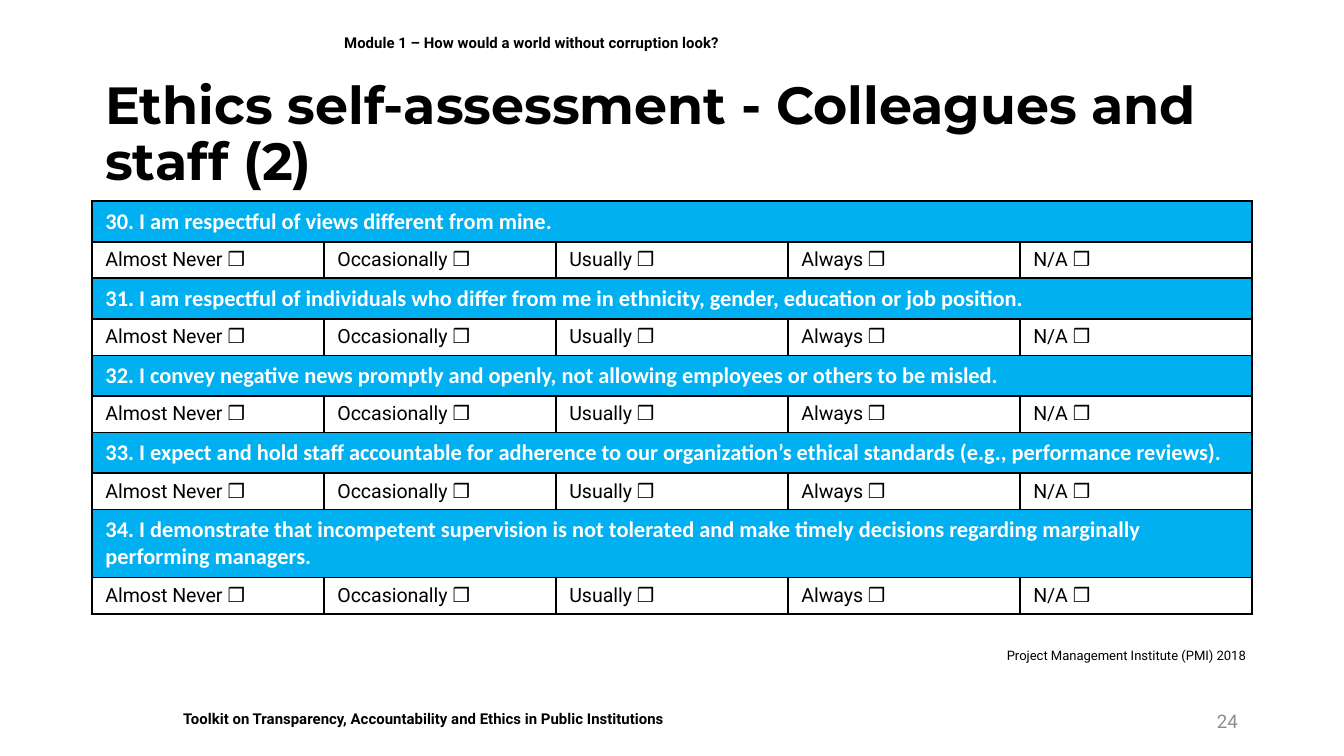
"""Build the ethics self-assessment slide: five statements, each with an answer row."""
from lxml.etree import SubElement
from pptx import Presentation
from pptx.dml.color import RGBColor
from pptx.enum.shapes import MSO_SHAPE
from pptx.enum.text import MSO_ANCHOR, PP_ALIGN
from pptx.oxml.ns import qn
from pptx.util import Emu, Pt

SCALE = 914400 / 134.4
STATEMENTS = [
    "30. I am respectful of views different from mine.",
    "31. I am respectful of individuals who differ from me in ethnicity, gender, education or job position.",
    "32. I convey negative news promptly and openly, not allowing employees or others to be misled.",
    "33. I expect and hold staff accountable for adherence to our organization’s ethical standards (e.g., performance reviews).",
    "34. I demonstrate that incompetent supervision is not tolerated and make timely decisions regarding marginally performing managers.",
]
ANSWERS = ["Almost Never ❒", "Occasionally ❒", "Usually ❒", "Always ❒", "N/A ❒"]
HEADER = dict(name="Calibri", size=Pt(12), bold=True)
ANSWER = dict(name="Roboto", size=Pt(10.5), bold=False)
LABEL = dict(name="Roboto", size=Pt(8), bold=True)
NUMBER = dict(name="Roboto", size=Pt(10), bold=False)
SOURCE = dict(name="Roboto", size=Pt(7), bold=False)
TITLE = dict(name="Montserrat", size=Pt(28), bold=True)
LEFT, MIDDLE, RIGHT, TOP = PP_ALIGN.LEFT, MSO_ANCHOR.MIDDLE, PP_ALIGN.RIGHT, MSO_ANCHOR.TOP


def write(tf, text, font, color):
    p = tf.paragraphs[0]
    r = p.add_run()
    r.text = text
    for key, value in font.items():
        setattr(r.font, key, value)
    r.font.color.rgb = RGBColor.from_string(color)
    return p


def px(*values):
    return [Emu(round(v * SCALE)) for v in values]


prs = Presentation()
prs.slide_width, prs.slide_height = px(1344, 756)
s = prs.slides.add_slide(prs.slide_layouts[6])

footer = s.shapes.add_shape(MSO_SHAPE.RECTANGLE, *px(170, 703, 964, 32))
footer.shadow.inherit = False
footer.fill.solid()
footer.fill.fore_color.rgb = RGBColor.from_string("FFFFFF")
footer.line.fill.background()
footer.text_frame.vertical_anchor = TOP
p = write(footer.text_frame, "Toolkit on Transparency, Accountability and Ethics in Public Institutions", LABEL, "000000")
p.alignment = LEFT
p.space_after = Pt(18)

table = s.shapes.add_table(2 * len(STATEMENTS), len(ANSWERS), *px(92, 201, 1160, 414)).table
table.first_row = table.horz_banding = False
for column in table.columns:
    column.width = px(232)[0]

for i, statement in enumerate(STATEMENTS):
    top = 2 * i
    table.rows[top].height, table.rows[top + 1].height = px(40, 36)
    table.cell(top, 0).merge(table.cell(top, len(ANSWERS) - 1))
    write(table.cell(top, 0).text_frame, statement, HEADER, "FFFFFF")
    for j, answer in enumerate(ANSWERS):
        write(table.cell(top + 1, j).text_frame, answer, ANSWER, "000000")
        for row, color in (top, "00B0F0"), (top + 1, None):
            cell = table.cell(row, j)
            tcPr = cell._tc.get_or_add_tcPr()
            for side in ("lnL", "lnR", "lnT", "lnB"):
                ln = SubElement(tcPr, qn(f"a:{side}"), w=str(Pt(1)))
                SubElement(SubElement(ln, qn("a:solidFill")), qn("a:srgbClr"), val="000000")
            if color:
                cell.fill.solid()
                cell.fill.fore_color.rgb = RGBColor.from_string(color)
            else:
                cell.fill.background()

for text, box, font, color, align, anchor, spacing in [
    ("Module 1 – How would a world without corruption look?",
     (331, 13, 921, 59), LABEL, "000000", LEFT, MIDDLE, 1.0),
    ("24", (949, 701, 302, 40), NUMBER, "8C8C8C", RIGHT, MIDDLE, 1.0),
    ("Ethics self-assessment - Colleagues and staff (2)",
     (92, 85, 1160, 101), TITLE, "000000", LEFT, MIDDLE, 0.9),
    ("Project Management Institute (PMI) 2018",
     (993, 641, 266, 30), SOURCE, "000000", RIGHT, TOP, 1.0),
]:
    sp = s.shapes.add_textbox(*px(*box))
    tf = sp.text_frame
    tf.word_wrap = True
    tf.vertical_anchor = anchor
    p = write(tf, text, font, color)
    p.alignment = align
    p.line_spacing = spacing

prs.save("out.pptx")
